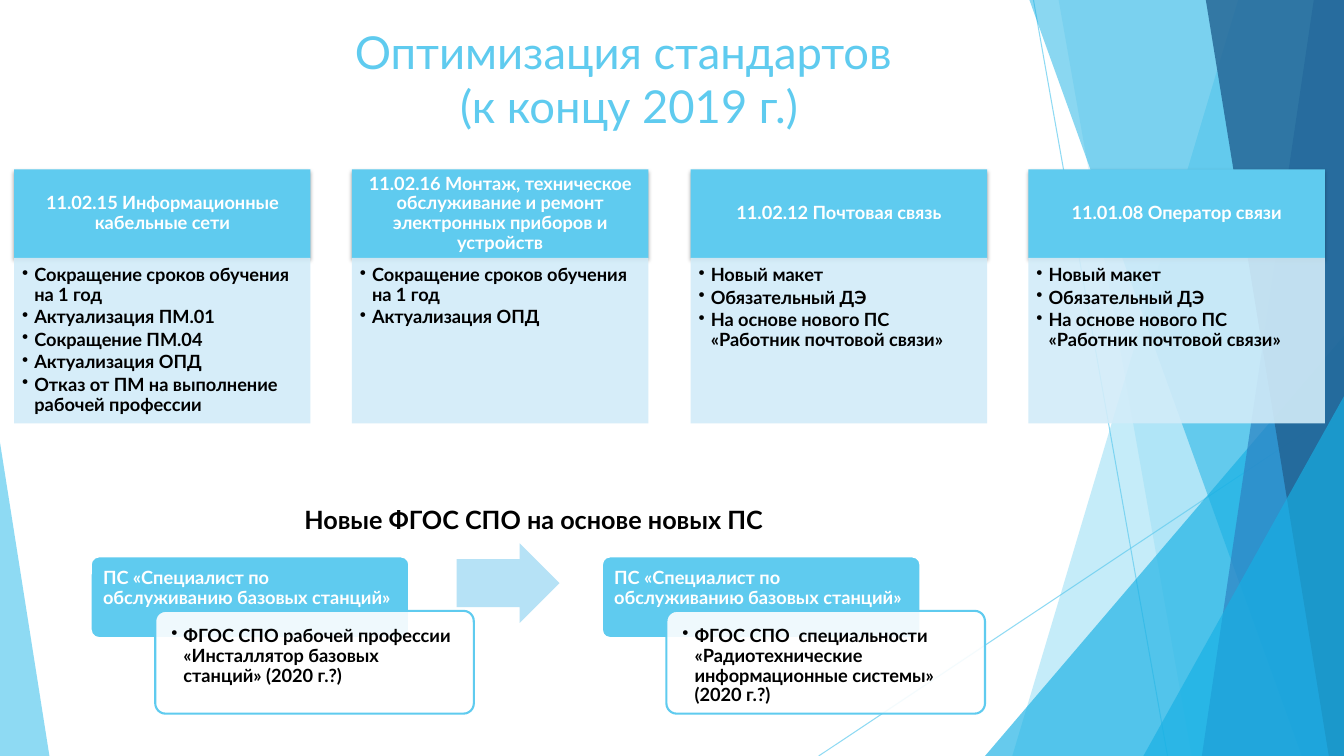
from lxml import etree
from pptx import Presentation
from pptx import util as u
from pptx.dml.color import RGBColor
from pptx.enum import shapes, text
from pptx.oxml.ns import qn

SCALE = 9144  # EMU in one px, 100 px to the inch
WIDTH, HEIGHT = 1333, 750
SKY, CYAN, WHITE, BLACK = "5FCBEF", "17B0E4", "FFFFFF", "000000"
SHAPE = shapes.MSO_SHAPE
CENTER = text.PP_ALIGN.CENTER
MIDDLE = text.MSO_ANCHOR.MIDDLE


def color(hex_string):
    return RGBColor.from_string(hex_string)


def px(length):
    return u.Emu(length * SCALE)


class Board:
    font = "Lato"

    def __init__(self, presentation):
        self.slide = presentation.slides.add_slide(presentation.slide_layouts[6])
        self.shapes = self.slide.shapes

    def paint(self, fill, hex_string, opacity=100):
        """Solid colour for a shape's or a line's fill."""
        fill.solid()
        fill.fore_color.rgb = color(hex_string)
        if opacity < 100:
            for node in fill._xPr.iter(qn("a:srgbClr")):
                etree.SubElement(node, qn("a:alpha"), val=str(opacity * 1000))

    def finish(self, shape, fill, opacity=100, line=None):
        shape.shadow.inherit = False
        self.paint(shape.fill, fill, opacity)
        if line:
            shape.line.color.rgb = color(line)
            shape.line.width = u.Pt(1.5)
        else:
            shape.line.fill.background()
        return shape

    def block(self, kind, box, fill, opacity=100, line=None, adjustments=()):
        shape = self.shapes.add_shape(kind, *map(px, box))
        for index, value in enumerate(adjustments):
            shape.adjustments[index] = value
        return self.finish(shape, fill, opacity, line)

    def facet(self, points, fill, opacity):
        builder = self.shapes.build_freeform(*points[0], scale=SCALE)
        builder.add_line_segments(points[1:], close=True)
        return self.finish(builder.convert_to_shape(), fill, opacity)

    def hairline(self, start, end):
        line = self.shapes.add_connector(
            shapes.MSO_CONNECTOR.STRAIGHT, *map(px, start + end))
        line.line.width = u.Pt(0.75)
        self.paint(line.line.fill, SKY, 70)
        etree.SubElement(line._element.spPr, qn("a:effectLst"))

    def drop_shadow(self, shape):
        effects = shape._element.spPr.find(qn("a:effectLst"))
        shadow = etree.SubElement(effects, qn("a:outerShdw"), blurRad="38100",
                                  dist="25400", dir="5400000", rotWithShape="0")
        black = etree.SubElement(shadow, qn("a:srgbClr"), val=BLACK)
        etree.SubElement(black, qn("a:alpha"), val="35000")

    def set_text(self, shape, lines, ink, size=13, bold=True,
                 align=text.PP_ALIGN.LEFT, anchor=text.MSO_ANCHOR.TOP,
                 insets=(10, 5, 10, 5), spacing=0.9, bullets=False, wrap=True):
        frame = shape.text_frame
        frame.word_wrap = wrap
        frame.vertical_anchor = anchor
        (frame.margin_left, frame.margin_top,
         frame.margin_right, frame.margin_bottom) = map(px, insets)
        frame.text = "\n".join(lines)
        for paragraph in frame.paragraphs:
            paragraph.alignment = align
            paragraph.line_spacing = spacing
            font = paragraph.font
            font.name, font.size, font.bold = self.font, u.Pt(size), bold
            font.color.rgb = color(ink)
            if bullets:
                paragraph.space_after = u.Pt(2)
                properties = paragraph._p.get_or_add_pPr()
                properties.set("marL", str(px(12)))
                properties.set("indent", str(px(-12)))
                bullet = etree.Element(qn("a:buChar"), char="•")
                properties.find(qn("a:defRPr")).addprevious(bullet)

    def label(self, box, line, ink, **style):
        self.set_text(self.shapes.add_textbox(*map(px, box)), [line], ink,
                      spacing=1.0, **style)

    def card(self, left, heading, items):
        head = self.block(SHAPE.RECTANGLE, (left, 168, 294, 88), SKY)
        self.drop_shadow(head)
        self.set_text(head, [heading], WHITE, align=CENTER, anchor=MIDDLE,
                      insets=(10, 6, 10, 6))
        body = self.block(SHAPE.RECTANGLE, (left, 256, 294, 164), "D2ECF9", 90)
        self.set_text(body, items, BLACK, insets=(8, 8, 10, 11), bullets=True)

    def stage(self, left, heading, item):
        head = self.block(SHAPE.ROUNDED_RECTANGLE, (left, 552, 316, 81), SKY,
                          line=WHITE, adjustments=[0.1])
        self.set_text(head, [heading], WHITE, insets=(10, 10, 10, 5))
        body = self.block(SHAPE.ROUNDED_RECTANGLE, (left + 64, 606, 316, 102), WHITE,
                          90, SKY, [0.1])
        self.set_text(body, [item], BLACK, insets=(13, 13, 13, 13), bullets=True)


def right_facet(top, bottom):
    """Outline that reaches the right edge from a slanted left side."""
    return [(top, 0), (WIDTH, 0), (WIDTH, HEIGHT), (bottom, HEIGHT)]


def main():
    presentation = Presentation()
    presentation.slide_width, presentation.slide_height = px(WIDTH), px(HEIGHT)
    board = Board(presentation)

    # Faceted background
    board.hairline((1025, 0), (1158, HEIGHT))
    board.hairline((WIDTH, 403), (812, HEIGHT))
    triangle = SHAPE.ISOSCELES_TRIANGLE
    board.facet(right_facet(1228, 1004), SKY, 36)
    board.facet(right_facet(1050, 1182), SKY, 20)
    board.block(triangle, (977, 333, 356, 417), CYAN, 66, adjustments=[1])
    board.facet(right_facet(1021, 1291), CYAN, 50)
    board.facet(right_facet(1303, 1192), "2E83C3", 70)
    board.facet(right_facet(1196, 1318), "226292", 80)
    board.block(triangle, (1134, 393, 199, 357), CYAN, 66, adjustments=[1])
    board.block(triangle, (0, 439, 49, 311), SKY, 70, adjustments=[0])

    # Title
    board.label((46, 19, 1156, 106), "Оптимизация стандартов \v(к концу 2019 г.)",
                SKY, size=32.4, bold=False, align=CENTER)

    # Standards and their changes
    shorter = "Сокращение сроков обучения на 1 год"
    update = "Актуализация ОПД"
    postal = ["Новый макет", "Обязательный ДЭ",
              "На основе нового ПС «Работник почтовой связи»"]
    cards = [
        ("11.02.15 Информационные кабельные сети",
         [shorter, "Актуализация ПМ.01", "Сокращение ПМ.04", update,
          "Отказ от ПМ на выполнение рабочей профессии"]),
        ("11.02.16 Монтаж, техническое обслуживание и ремонт "
         "электронных приборов и устройств", [shorter, update]),
        ("11.02.12 Почтовая связь", postal),
        ("11.01.08 Оператор связи", postal),
    ]
    for index, (heading, items) in enumerate(cards):
        board.card(round(14 + index * 335.4), heading, items)

    # New standards
    source = "ПС «Специалист по обслуживанию базовых станций»"
    board.stage(90, source, "ФГОС СПО рабочей профессии "
                "«Инсталлятор базовых станций» (2020 г.?)")
    board.block(SHAPE.RIGHT_ARROW, (453, 539, 102, 79), "B6E2F6",
                adjustments=[0.6, 0.5])
    board.stage(597, source, "ФГОС СПО  специальности "
                "«Радиотехнические информационные системы» (2020 г.?)")
    board.label((292, 495, 482, 40), "Новые ФГОС СПО на основе новых ПС", BLACK,
                size=18, wrap=False)

    presentation.save("out.pptx")


if __name__ == "__main__":
    main()
